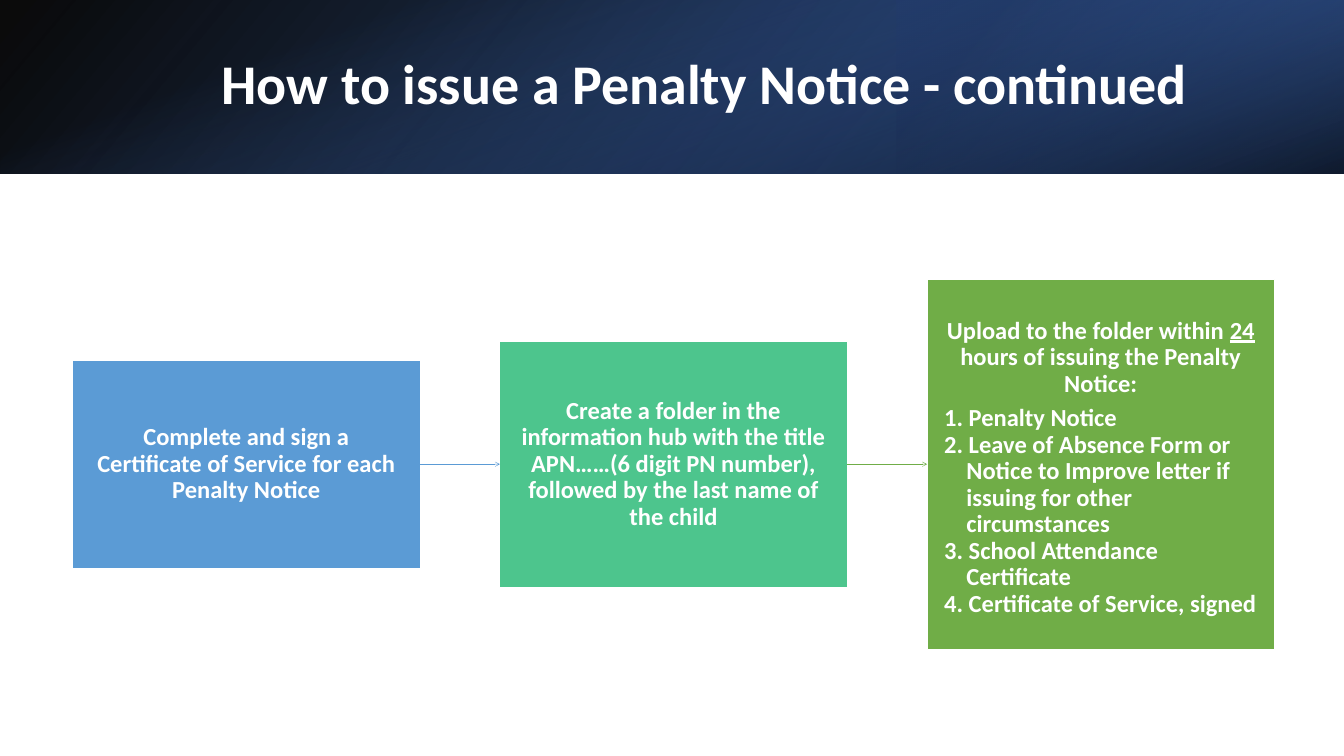
from pptx import Presentation
from pptx.dml.color import RGBColor
from pptx.enum.shapes import MSO_CONNECTOR, MSO_SHAPE
from pptx.enum.text import MSO_ANCHOR, PP_ALIGN
from pptx.oxml.ns import qn
from pptx.util import Inches, Pt
from lxml import etree

WHITE = RGBColor(0xFF, 0xFF, 0xFF)
BLACK = RGBColor(0x00, 0x00, 0x00)
NAVY = RGBColor(0x20, 0x38, 0x64)
DEEP_BLUE = RGBColor(0x2F, 0x55, 0x97)
ROYAL = RGBColor(0x44, 0x72, 0xC4)
BLUE = RGBColor(0x5B, 0x9B, 0xD5)
TEAL = RGBColor(0x4D, 0xC5, 0x8D)
GREEN = RGBColor(0x70, 0xAD, 0x47)


def add_band(x, y, w, h, rotation, flip, angle, stops):
    sp = s.shapes.add_shape(MSO_SHAPE.RECTANGLE, Inches(x), Inches(y), Inches(w), Inches(h))
    sp.shadow.inherit = False
    sp.line.fill.background()
    sp.rotation = rotation
    if flip:
        sp._element.spPr.find(qn("a:xfrm")).set("flipH", "1")
    sp.fill.gradient()
    sp.fill.gradient_angle = 360 - angle
    for stop, (position, color, _) in zip(sp.fill.gradient_stops, stops):
        stop.position = position / 100
        stop.color.rgb = color
    for clr, (_, _, alpha) in zip(sp._element.spPr.iter(qn("a:srgbClr")), stops):
        etree.SubElement(clr, qn("a:alpha")).set("val", str(alpha * 1000))


def add_runs(p, parts, size):
    p.line_spacing = 0.9
    for text, underline in parts:
        r = p.add_run()
        r.text = text
        r.font.name = "Calibri"
        r.font.size = Pt(size)
        r.font.bold = True
        r.font.color.rgb = WHITE
        if underline:
            r.font.underline = True


prs = Presentation()
prs.slide_width = Inches(26.66)
prs.slide_height = Inches(15)
s = prs.slides.add_slide(prs.slide_layouts[6])

add_band(0, 0, 26.66, 3.45, 0, True, 140, [(0, BLACK, 96), (100, DEEP_BLUE, 100)])
add_band(17.78, 0, 8.89, 3.45, 180, True, 320, [(19, NAVY, 68), (100, ROYAL, 79)])
add_band(11.61, -11.61, 3.45, 26.66, 90, False, 340, [(23, ROYAL, 0), (99, BLACK, 74)])

title = s.shapes.add_textbox(Inches(3), Inches(0.76), Inches(21.97), Inches(1.92))
tf = title.text_frame
tf.word_wrap = True
tf.vertical_anchor = MSO_ANCHOR.MIDDLE
p = tf.paragraphs[0]
p.alignment = PP_ALIGN.CENTER
add_runs(p, [("How to issue a Penalty Notice - continued", False)], 80)

steps = [
    (BLUE, 4.13, [("Complete and sign a Certificate of Service for each Penalty Notice", False)]),
    (TEAL, 4.88, [("Create a folder in the information hub with the title APN……(6 digit PN number), "
                   "followed by the last name of the child", False)]),
    (GREEN, 7.34, [("Upload to the folder within ", False), ("24 ", True),
                   ("hours of issuing the Penalty Notice:", False)]),
]
documents = [
    "1. Penalty Notice",
    "2. Leave of Absence Form or Notice to Improve letter if issuing for other circumstances",
    "3. School Attendance Certificate",
    "4. Certificate of Service, signed",
]

LEFT, PITCH, WIDTH, MIDDLE = 1.44, 8.475, 6.89, 9.21
boxes = []
for i, (color, height, parts) in enumerate(steps):
    sp = s.shapes.add_shape(MSO_SHAPE.RECTANGLE, Inches(LEFT + i * PITCH),
                            Inches(MIDDLE - height / 2), Inches(WIDTH), Inches(height))
    sp.shadow.inherit = False
    sp.fill.solid()
    sp.fill.fore_color.rgb = color
    sp.line.color.rgb = WHITE
    sp.line.width = Pt(1)
    tf = sp.text_frame
    tf.word_wrap = True
    tf.vertical_anchor = MSO_ANCHOR.MIDDLE
    tf.margin_left = tf.margin_right = Inches(0.34)
    tf.margin_top = tf.margin_bottom = Inches(0.35)
    p = tf.paragraphs[0]
    p.alignment = PP_ALIGN.CENTER
    add_runs(p, parts, 35)
    boxes.append(sp)

tf = boxes[-1].text_frame
tf.margin_top = Inches(0.42)
tf.margin_bottom = Inches(0.28)
tf.paragraphs[0].space_after = Pt(12)
for document in documents:
    p = tf.add_paragraph()
    p.alignment = PP_ALIGN.LEFT
    pPr = p._p.get_or_add_pPr()
    pPr.set("marL", str(Inches(0.44)))
    pPr.set("indent", str(-Inches(0.44)))
    add_runs(p, [(document, False)], 35)

for start, end, color in zip(boxes, boxes[1:], (BLUE, GREEN)):
    arrow = s.shapes.add_connector(MSO_CONNECTOR.STRAIGHT, 0, 0, 0, 0)
    arrow.begin_connect(start, 3)
    arrow.end_connect(end, 1)
    arrow.line.color.rgb = color
    arrow.line.width = Pt(0.5)
    etree.SubElement(arrow.line._get_or_add_ln(), qn("a:tailEnd")).set("type", "arrow")
    etree.SubElement(arrow._element.spPr, qn("a:effectLst"))

prs.save("out.pptx")
